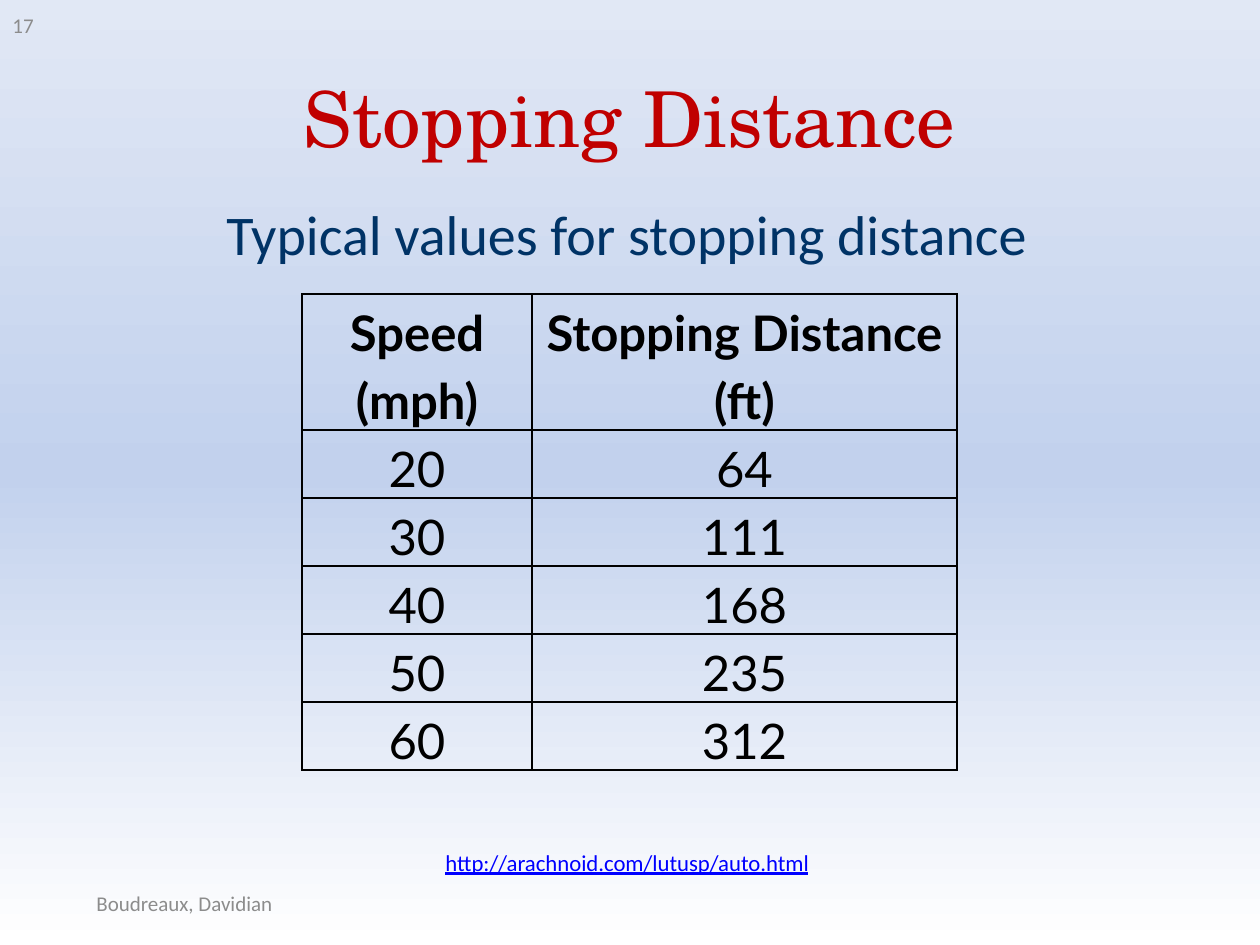
"""Build the stopping distance slide."""
from copy import deepcopy
from lxml import etree
from pptx import Presentation
from pptx import util as u
from pptx.dml.color import RGBColor
from pptx.enum import text
from pptx.oxml.ns import qn

PX = 914400 // 126
RED = RGBColor(0xC0, 0, 0)
NAVY = RGBColor(0, 0x33, 0x66)
BLUE = RGBColor(0, 0, 0xFF)
GRAY = RGBColor(0x8C, 0x8C, 0x8C)
BLACK = RGBColor(0, 0, 0)
STOPS = [(0, RGBColor(255, 255, 255)), (0.5, RGBColor(0xC2, 0xD1, 0xED)),
         (1, RGBColor(0xE1, 0xE8, 0xF5))]
MID, LEFT = text.PP_ALIGN.CENTER, text.PP_ALIGN.LEFT

LABELS = [
    ("Stopping Distance", (63, 38, 1134, 157), "TeX Gyre Schola", 44, RED, MID),
    ("Typical values for stopping distance", (126, 193, 1002, 80), "Calibri", 32, NAVY, MID),
    ("http://arachnoid.com/lutusp/auto.html", (126, 840, 1002, 44), "Calibri", 13, BLUE, MID),
    ("17", (0, 0, 294, 50), "Calibri", 12, GRAY, LEFT),
    ("Boudreaux, Davidian", (84, 878, 399, 50), "Calibri", 12, GRAY, LEFT),
]
ROWS = [("Speed (mph)", "Stopping Distance (ft)"), ("20", "64"), ("30", "111"),
        ("40", "168"), ("50", "235"), ("60", "312")]
COLS = (230, 425)
HEAD, ROW = 136, 68
GRID = (302, 294)


def write(par, words, font, size, color, align):
    par.alignment = align
    run = par.add_run()
    run.text = words
    run.font.name = font
    run.font.size = u.Pt(size)
    run.font.color.rgb = color
    return run


def label(slide, words, place, *style):
    frame = slide.shapes.add_textbox(*(n * PX for n in place)).text_frame
    frame.word_wrap = True
    frame.vertical_anchor = text.MSO_ANCHOR.MIDDLE
    run = write(frame.paragraphs[0], words, *style)
    run.font.underline = words.startswith("http") or None


def border(cell):
    props = cell._tc.get_or_add_tcPr()
    for side in ("lnL", "lnR", "lnT", "lnB"):
        line = etree.SubElement(props, qn("a:" + side), w=str(u.Pt(1)))
        fill = etree.SubElement(line, qn("a:solidFill"))
        etree.SubElement(fill, qn("a:srgbClr"), val=str(BLACK))


def grid(slide):
    high = HEAD + ROW * (len(ROWS) - 1)
    size = (*GRID, sum(COLS), high)
    table = slide.shapes.add_table(len(ROWS), len(COLS), *(n * PX for n in size)).table
    table.first_row = table.horz_banding = False
    for col, wide in zip(table.columns, COLS):
        col.width = wide * PX
    for i, (row, words) in enumerate(zip(table.rows, ROWS)):
        row.height = (ROW if i else HEAD) * PX
        for cell, word in zip(row.cells, words):
            border(cell)
            cell.fill.background()
            cell.margin_left = cell.margin_right = 9 * PX
            cell.margin_top = cell.margin_bottom = 0
            cell.vertical_anchor = text.MSO_ANCHOR.BOTTOM
            par = cell.text_frame.paragraphs[0]
            par.line_spacing = 1.15
            write(par, word, "Lato", 28, BLACK, MID).font.bold = i == 0


def shade(slide):
    fill = slide.background.fill
    fill.gradient()
    fill.gradient_angle = 90
    stops = slide._element.find(".//" + qn("a:gsLst"))
    stops.append(deepcopy(stops[-1]))
    for stop, (where, color) in zip(fill.gradient_stops, STOPS):
        stop.position = where
        stop.color.rgb = color


def main():
    deck = Presentation()
    deck.slide_width, deck.slide_height = 1260 * PX, 945 * PX
    slide = deck.slides.add_slide(deck.slide_layouts[6])
    shade(slide)
    for item in LABELS:
        label(slide, *item)
    grid(slide)
    deck.save("out.pptx")


if __name__ == "__main__":
    main()
